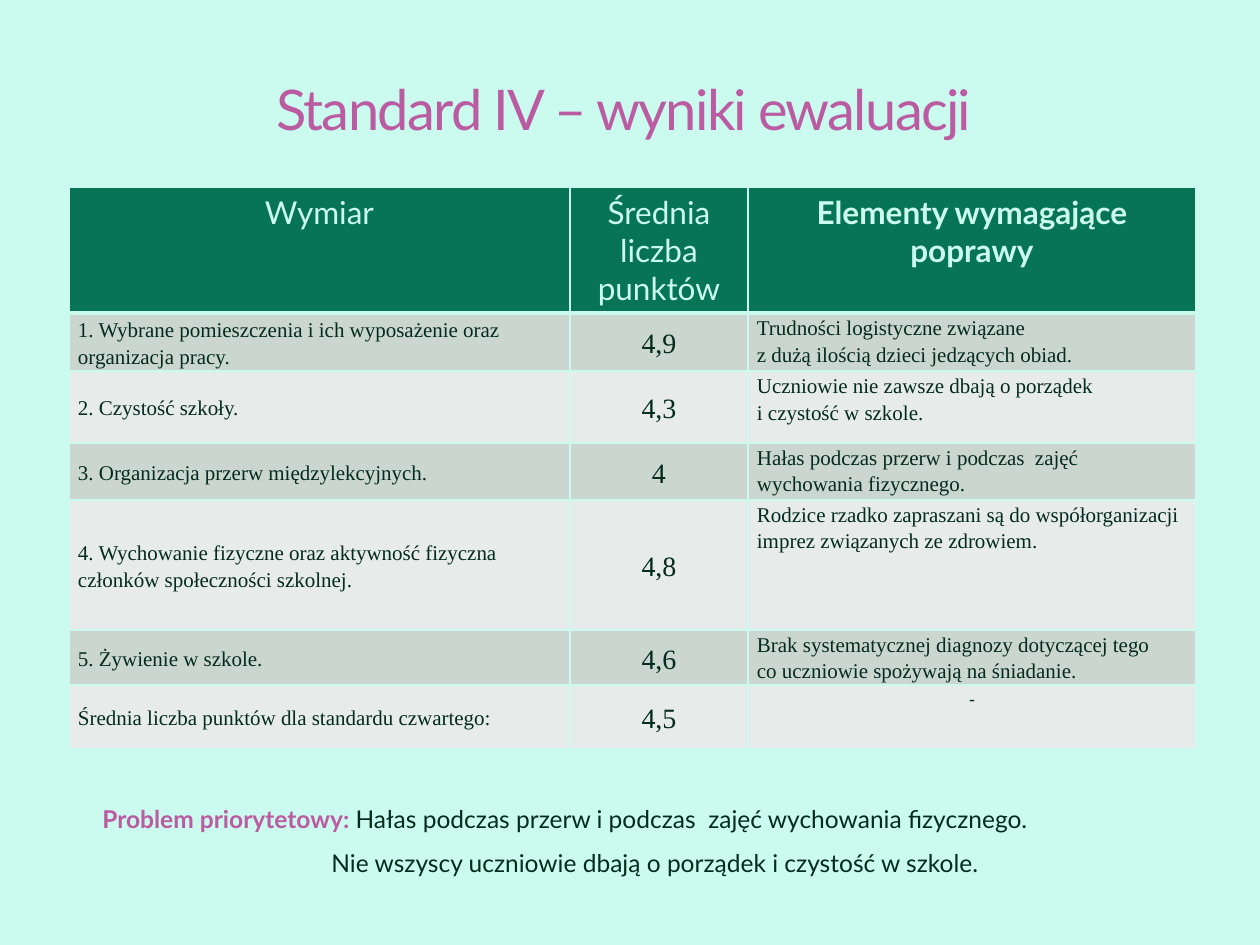
import pptx
import pptx.util
import pptx.dml.color
import pptx.enum.text
import pptx.oxml
import pptx.oxml.ns

PX = 914400 // 126
COLORS = {"mint": "CBFBEE", "green": "087456", "dark": "032B1F", "pink": "BB5BA2",
          "band_dark": "CCD6D1", "band_light": "E7EBE9"}
SANS, SERIF = "Lato", "Times New Roman"
CENTER, LEFT = pptx.enum.text.PP_ALIGN.CENTER, pptx.enum.text.PP_ALIGN.LEFT
MIDDLE, TOP = pptx.enum.text.MSO_ANCHOR.MIDDLE, pptx.enum.text.MSO_ANCHOR.TOP

TITLE = "Standard IV – wyniki ewaluacji "
HEADINGS = ["Wymiar", "Średnia liczba punktów", "Elementy wymagające poprawy"]
RESULTS = [
    ("1. Wybrane pomieszczenia i ich wyposażenie oraz organizacja pracy.", "4,9",
     "Trudności logistyczne związane \vz dużą ilością dzieci jedzących obiad."),
    ("2. Czystość szkoły.", "4,3",
     "Uczniowie nie zawsze dbają o porządek \vi czystość w szkole."),
    ("3. Organizacja przerw międzylekcyjnych.", "4",
     "Hałas podczas przerw i podczas  zajęć wychowania fizycznego."),
    ("4. Wychowanie fizyczne oraz aktywność fizyczna członków społeczności szkolnej.", "4,8",
     "Rodzice rzadko zapraszani są do współorganizacji imprez związanych ze zdrowiem."),
    ("5. Żywienie w szkole.", "4,6",
     "Brak systematycznej diagnozy dotyczącej tego \vco uczniowie spożywają na śniadanie."),
    ("Średnia liczba punktów dla standardu czwartego:", "4,5", "-"),
]
# Each problem line: left indent in px, then (text, colour, bold) pieces
PROBLEMS = [
    (21, [("Problem priorytetowy: ", "pink", True),
          ("Hałas podczas przerw i podczas  zajęć wychowania fizycznego.", "dark", False)]),
    (250, [("Nie wszyscy uczniowie dbają o porządek i czystość w szkole.", "dark", False)]),
]
COLUMN_WIDTHS = [501, 178, 448]
ROW_HEIGHTS = [118, 58, 72, 57, 130, 55, 64]


def px(*lengths):
    return [length * PX for length in lengths]


def rgb(color):
    return pptx.dml.color.RGBColor.from_string(COLORS[color])


def style(run, size, font, color, bold=False):
    run.font.size = pptx.util.Pt(size)
    run.font.name = font
    run.font.bold = bold
    run.font.color.rgb = rgb(color)


def set_borders(cell, bottom):
    """Draw mint borders, 1 pt wide except for the given bottom width."""
    properties = cell._tc.get_or_add_tcPr()
    for index, side in enumerate("LRTB"):
        width = pptx.util.Pt(bottom if side == "B" else 1)
        properties.insert(index, pptx.oxml.parse_xml(
            f'<a:ln{side} {pptx.oxml.ns.nsdecls("a")} w="{width}"><a:solidFill>'
            f'<a:srgbClr val="{COLORS["mint"]}"/></a:solidFill></a:ln{side}>'))


def fill_cell(cell, text, background, align, size, font, color, bold=False, bottom=1):
    cell.fill.solid()
    cell.fill.fore_color.rgb = rgb(background)
    set_borders(cell, bottom)
    paragraph = cell.text_frame.paragraphs[0]
    paragraph.text = text
    paragraph.alignment = align
    for run in paragraph.runs:
        style(run, size, font, color, bold)
    return paragraph


def add_title(slide):
    title = slide.shapes.title
    title.left, title.top, title.width, title.height = px(63, 49, 1134, 118)
    title.text_frame.text = TITLE
    title.text_frame.vertical_anchor = MIDDLE
    paragraph = title.text_frame.paragraphs[0]
    paragraph.alignment = CENTER
    style(paragraph.runs[0], 32, SANS, "pink")
    paragraph.runs[0].font._element.set("spc", "-100")


def add_results(slide):
    table = slide.shapes.add_table(
        len(ROW_HEIGHTS), len(COLUMN_WIDTHS),
        *px(69, 187, sum(COLUMN_WIDTHS), sum(ROW_HEIGHTS))).table
    for column, width in zip(table.columns, px(*COLUMN_WIDTHS)):
        column.width = width
    for row, height in zip(table.rows, px(*ROW_HEIGHTS)):
        row.height = height

    for column, heading in enumerate(HEADINGS):
        fill_cell(table.cell(0, column), heading, "green", CENTER, 18, SANS, "mint",
                  bold=column == 2, bottom=3)

    for row, result in enumerate(RESULTS, start=1):
        band = "band_dark" if row % 2 else "band_light"
        for column, text in enumerate(result):
            cell = table.cell(row, column)
            size, font = (11, "Calibri") if text == "-" else ((12, 16, 12)[column], SERIF)
            align = CENTER if column == 1 or text == "-" else LEFT
            paragraph = fill_cell(cell, text, band, align, size, font, "dark")
            paragraph.line_spacing = 1.15
            paragraph.space_after = pptx.util.Pt(10)
            cell.vertical_anchor = TOP if column == 2 else MIDDLE
            cell.margin_left, cell.margin_right, cell.margin_top, cell.margin_bottom = px(9, 9, 0, 0)


def add_problems(slide):
    frame = slide.shapes.add_textbox(*px(69, 785, 1131, 96)).text_frame
    frame.word_wrap = True
    frame.vertical_anchor = MIDDLE
    for index, (indent, pieces) in enumerate(PROBLEMS):
        paragraph = frame.add_paragraph() if index else frame.paragraphs[0]
        paragraph.line_spacing = 1.5
        paragraph._p.get_or_add_pPr().set("marL", str(indent * PX))
        for text, color, bold in pieces:
            run = paragraph.add_run()
            run.text = text
            style(run, 14, SANS, color, bold)


def main():
    deck = pptx.Presentation()
    deck.slide_width, deck.slide_height = px(1260, 945)
    slide = deck.slides.add_slide(deck.slide_layouts[5])
    slide.background.fill.solid()
    slide.background.fill.fore_color.rgb = rgb("mint")
    add_results(slide)
    add_title(slide)
    add_problems(slide)
    deck.save("out.pptx")


if __name__ == "__main__":
    main()
